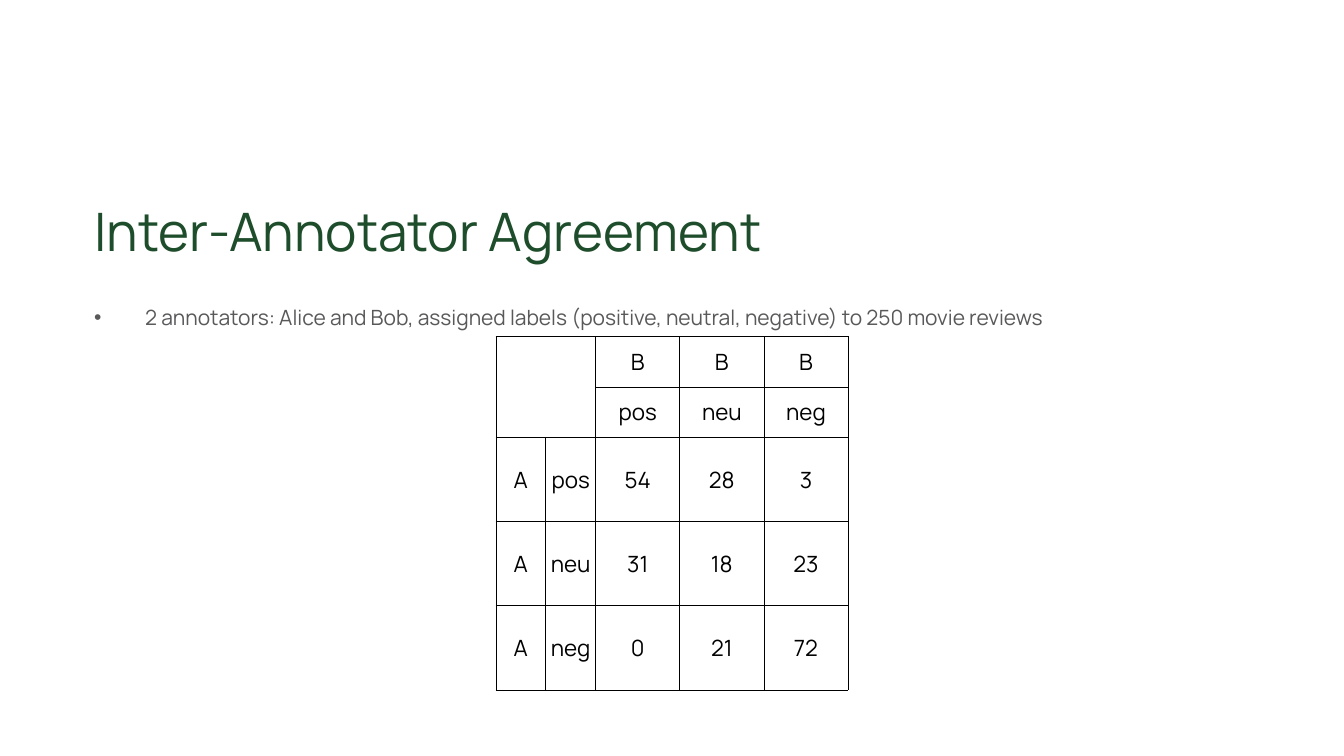
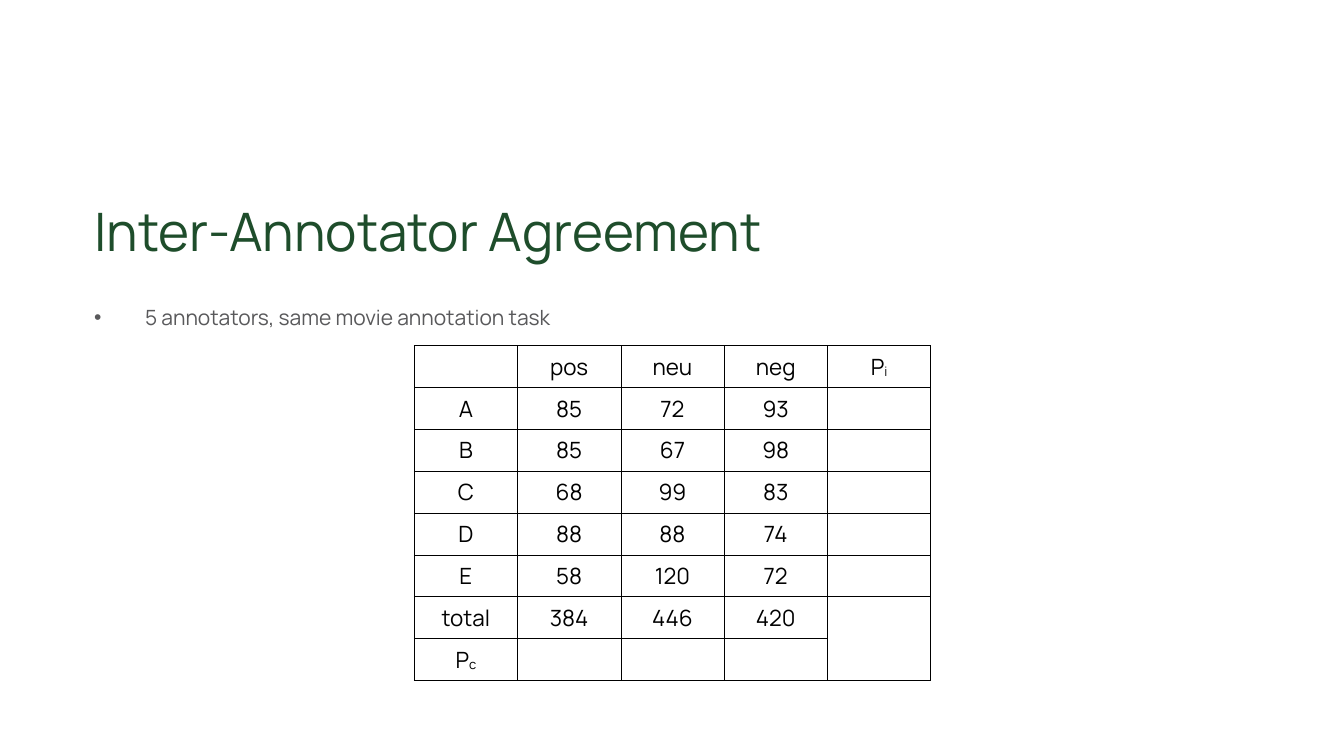
"""Build two slides on inter-annotator agreement."""
from lxml.etree import SubElement as Sub
from pptx import Presentation
from pptx.dml.color import RGBColor
from pptx.enum.text import MSO_ANCHOR as Anchor, MSO_AUTO_SIZE as Fit, PP_ALIGN as Align
from pptx.oxml.ns import qn
from pptx.util import Inches, Pt

GREEN = RGBColor(0x1E, 0x4D, 0x2B)
GREY = RGBColor(0x59, 0x59, 0x5B)
BLACK = RGBColor(0, 0, 0)
FONT = "Manrope"
TITLE = "Inter-Annotator Agreement"

PAIR = {
    "point": "2 annotators: Alice and Bob, assigned labels (positive, neutral, negative) to 250 movie reviews",
    "left": 9.84, "top": 6.68,
    "cols": [0.99] * 2 + [1.67] * 3,
    "rows": [1] * 2 + [1.67] * 3,
    "merge": [(0, 0), (1, 1)],
    "cells": [
        ["", "", "B", "B", "B"],
        ["", "", "pos", "neu", "neg"],
        ["A", "pos", "54", "28", "3"],
        ["A", "neu", "31", "18", "23"],
        ["A", "neg", "0", "21", "72"],
    ],
}
GROUP = {
    "point": "5 annotators, same movie annotation task",
    "left": 8.22, "top": 6.86,
    "cols": [2.05] * 5,
    "rows": [0.83] * 8,
    "merge": [(6, 4), (7, 4)],
    "cells": [
        ["", "pos", "neu", "neg", "P_i"],
        ["A", "85", "72", "93", ""],
        ["B", "85", "67", "98", ""],
        ["C", "68", "99", "83", ""],
        ["D", "88", "88", "74", ""],
        ["E", "58", "120", "72", ""],
        ["total", "384", "446", "420", ""],
        ["P_c", "", "", "", ""],
    ],
}


def style(font, size, color):
    font.name = FONT
    font.size = Pt(size)
    font.color.rgb = color


def fill_cell(cell, text):
    props = cell._tc.get_or_add_tcPr()
    for side in ("lnL", "lnR", "lnT", "lnB"):
        line = Sub(props, qn(f"a:{side}"), w=str(Pt(1)))
        Sub(Sub(line, qn("a:solidFill")), qn("a:srgbClr"), val=str(BLACK))
    cell.fill.background()
    cell.vertical_anchor = Anchor.MIDDLE
    cell.margin_left = cell.margin_right = Inches(0.06)
    cell.margin_top = cell.margin_bottom = Inches(0.06)
    if not text:
        return
    para = cell.text_frame.paragraphs[0]
    para.alignment = Align.CENTER
    for i, part in enumerate(text.split("_")):
        run = para.add_run()
        run.text = part
        style(run.font, 32, BLACK)
        if i:
            run._r.get_or_add_rPr().set("baseline", "-6000")


deck = Presentation()
deck.slide_width, deck.slide_height = Inches(26.67), Inches(15)

for data in (PAIR, GROUP):
    slide = deck.slides.add_slide(deck.slide_layouts[1])
    title, body = slide.shapes.title, slide.placeholders[1]
    for box, top, height, text, size, color in (
        (title, 3.73, 1.68, TITLE, 75.7, GREEN),
        (body, 5.84, 7.51, data["point"], 30, GREY),
    ):
        box.left, box.top = Inches(1.77), Inches(top)
        box.width, box.height = Inches(23.92), Inches(height)
        frame = box.text_frame
        frame.text = text
        frame.auto_size = Fit.NONE
        frame.margin_left = frame.margin_right = Inches(0.1)
        frame.margin_top = frame.margin_bottom = Inches(0.1)
        para = frame.paragraphs[0]
        para.alignment = Align.LEFT
        style(para.runs[0].font, size, color)

    para = body.text_frame.paragraphs[0]
    props = para._p.get_or_add_pPr()
    props.set("marL", str(Inches(1.01)))
    props.set("indent", str(-Inches(1.01)))
    Sub(props, qn("a:buFont"), typeface="Arial")
    Sub(props, qn("a:buChar"), char="•")
    para.line_spacing = 1.2
    para.space_before = Pt(0)

    cols, rows = data["cols"], data["rows"]
    table = slide.shapes.add_table(
        len(rows), len(cols), Inches(data["left"]), Inches(data["top"]),
        Inches(sum(cols)), Inches(sum(rows))).table
    table.first_row = table.horz_banding = False
    for col, width in zip(table.columns, cols):
        col.width = Inches(width)
    for row, height, texts in zip(table.rows, rows, data["cells"]):
        row.height = Inches(height)
        for cell, text in zip(row.cells, texts):
            fill_cell(cell, text)
    first, last = data["merge"]
    table.cell(*first).merge(table.cell(*last))

deck.save("out.pptx")
